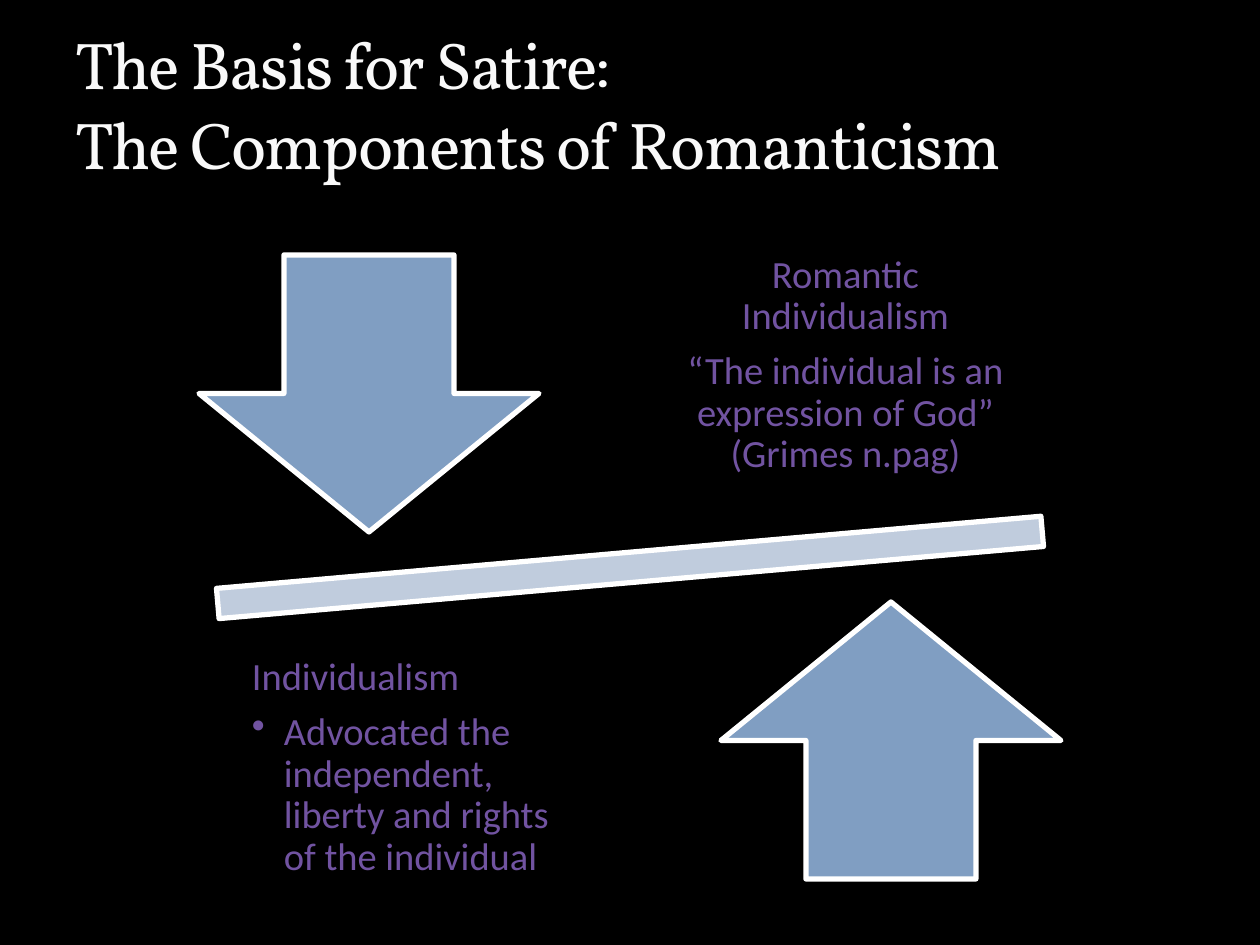
from typing import Any, NamedTuple

from lxml import etree
from pptx import Presentation
from pptx.dml.color import RGBColor
from pptx.enum.shapes import MSO_SHAPE
from pptx.enum.text import MSO_ANCHOR, MSO_AUTO_SIZE, PP_ALIGN
from pptx.oxml.ns import qn
from pptx.util import Emu, Pt

MINUS, DOWN, UP = MSO_SHAPE.MATH_MINUS, MSO_SHAPE.DOWN_ARROW, MSO_SHAPE.UP_ARROW
LEFT, CENTER = PP_ALIGN.LEFT, PP_ALIGN.CENTER
MIDDLE, BOTTOM = MSO_ANCHOR.MIDDLE, MSO_ANCHOR.BOTTOM
NO_AUTOFIT = MSO_AUTO_SIZE.NONE
TITLE_ONLY = 5
PX_PER_INCH = 126

COLORS = {
    "background": "000000",
    "title": "F9F9F9",
    "body": "7153A1",
    "arrow": "809EC2",
    "beam": "C0CCDD",
    "outline": "FFFFFF",
}


class Box(NamedTuple):
    left: int
    top: int
    width: int
    height: int


class Figure(NamedTuple):
    kind: Any
    box: Box
    color: str
    rotation: int = 0


class Line(NamedTuple):
    text: str
    space_after: float
    bulleted: bool = False


class Caption(NamedTuple):
    box: Box
    alignment: Any
    lines: tuple[Line, ...]


TITLE = "The Basis for Satire:\vThe Components of Romanticism"
TITLE_BOX = Box(63, 21, 1134, 168)
CAPTION_INSET = 21
BULLET_INDENT = 32

FIGURES = (
    Figure(MINUS, Box(67, 503, 1126, 129), "beam", 355),
    Figure(DOWN, Box(199, 255, 340, 277), "arrow"),
    Figure(UP, Box(721, 602, 340, 277), "arrow"),
)
CAPTIONS = (
    Caption(Box(664, 220, 363, 291), CENTER, (
        Line("Romantic Individualism", 7.7),
        Line("“The individual is an expression of God” (Grimes n.pag)", 7.7),
    )),
    Caption(Box(231, 592, 363, 352), LEFT, (
        Line("Individualism", 7.7),
        Line("Advocated the independent, liberty and rights of the individual", 3.3, True),
    )),
)


def px(length: int) -> Emu:
    return Emu(round(length * 914400 / PX_PER_INCH))


def rgb(name: str) -> RGBColor:
    return RGBColor.from_string(COLORS[name])


def set_all(target: Any, values: dict[str, Any]) -> None:
    for name, value in values.items():
        setattr(target, name, value)


def style_font(font: Any, name: str, size: float, color: str) -> None:
    set_all(font, {"name": name, "size": Pt(size)})
    font.color.rgb = rgb(color)


def add_title(slide: Any) -> None:
    title = slide.shapes.title
    set_all(title, {name: px(value) for name, value in TITLE_BOX._asdict().items()})
    frame = title.text_frame
    frame.text = TITLE
    set_all(frame, {"auto_size": NO_AUTOFIT, "vertical_anchor": BOTTOM, "word_wrap": True})
    paragraph = frame.paragraphs[0]
    paragraph.alignment = LEFT
    for run in paragraph.runs:
        style_font(run.font, "Vollkorn", 37.8, "title")
        run.font._element.set("spc", "-100")


def add_figure(slide: Any, figure: Figure) -> None:
    shape = slide.shapes.add_shape(figure.kind, *map(px, figure.box))
    shape.rotation = figure.rotation
    shape.shadow.inherit = False
    shape.fill.solid()
    shape.fill.fore_color.rgb = rgb(figure.color)
    shape.line.color.rgb = rgb("outline")
    shape.line.width = Pt(3)


def add_bullet(paragraph: Any) -> None:
    properties = paragraph._p.get_or_add_pPr()
    properties.set("marL", str(px(BULLET_INDENT)))
    properties.set("indent", str(-px(BULLET_INDENT)))
    etree.SubElement(properties, qn("a:buChar")).set("char", "•")


def add_caption(slide: Any, caption: Caption) -> None:
    frame = slide.shapes.add_textbox(*map(px, caption.box)).text_frame
    set_all(frame, {"word_wrap": True, "vertical_anchor": MIDDLE})
    set_all(frame, {f"margin_{side}": px(CAPTION_INSET)
                    for side in ("left", "top", "right", "bottom")})
    for index, line in enumerate(caption.lines):
        paragraph = frame.add_paragraph() if index else frame.paragraphs[0]
        set_all(paragraph, {
            "alignment": caption.alignment,
            "line_spacing": 0.9,
            "space_after": Pt(line.space_after),
        })
        run = paragraph.add_run()
        run.text = line.text
        style_font(run.font, "Calibri", 22, "body")
        if line.bulleted:
            paragraph.level = 1
            add_bullet(paragraph)


def main() -> None:
    presentation = Presentation()
    set_all(presentation, {"slide_width": px(1260), "slide_height": px(945)})
    slide = presentation.slides.add_slide(presentation.slide_layouts[TITLE_ONLY])
    slide.background.fill.solid()
    slide.background.fill.fore_color.rgb = rgb("background")
    for figure in FIGURES:
        add_figure(slide, figure)
    for caption in CAPTIONS:
        add_caption(slide, caption)
    add_title(slide)
    presentation.save("out.pptx")


if __name__ == "__main__":
    main()
